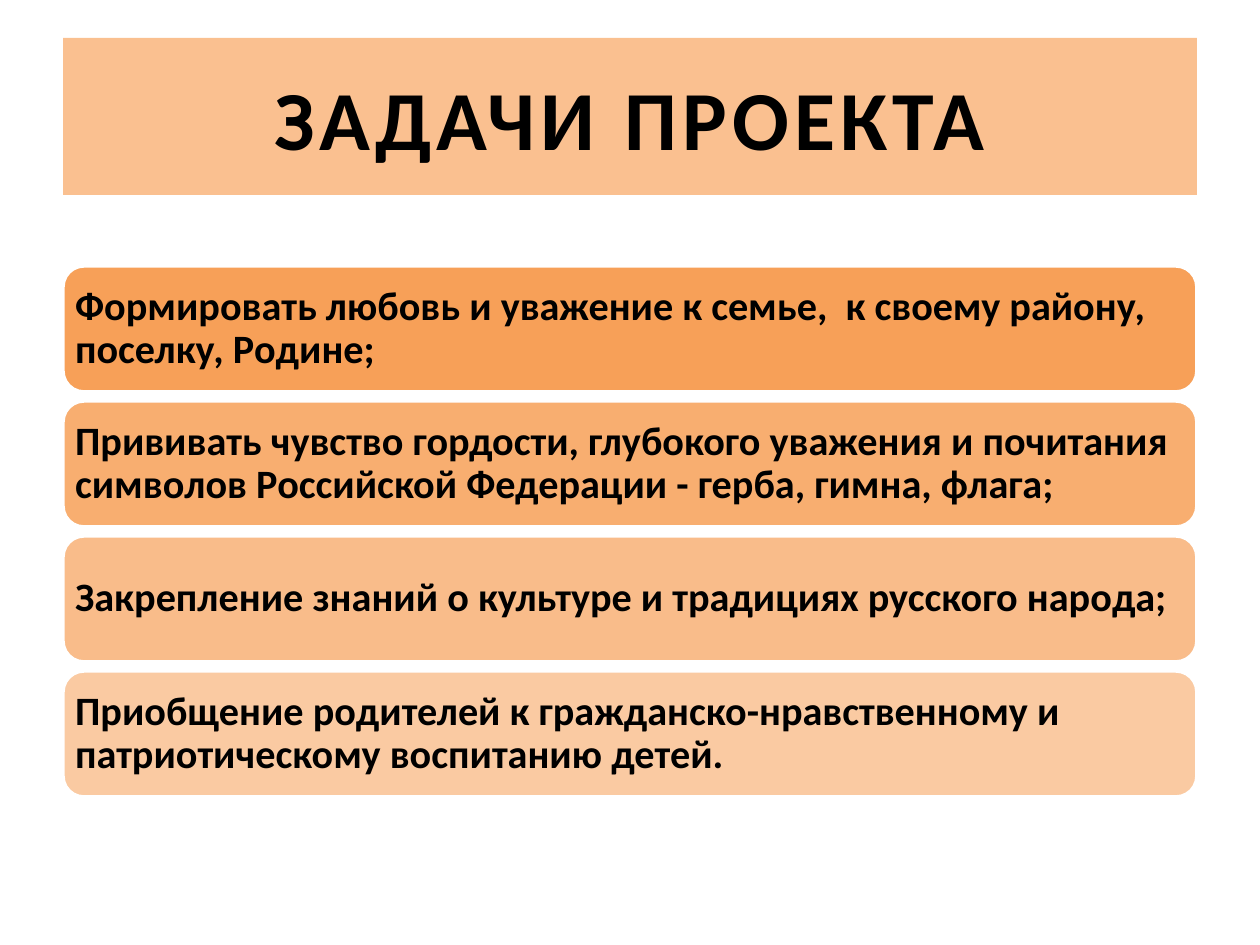
from lxml import etree
from pptx import Presentation
from pptx.dml.color import RGBColor
from pptx.enum.shapes import MSO_SHAPE
from pptx.enum.text import MSO_ANCHOR, PP_ALIGN
from pptx.oxml import parse_xml
from pptx.oxml.ns import nsdecls, qn
from pptx.util import Emu, Pt

TITLE = "ЗАДАЧИ ПРОЕКТА"
# Text of each task and the opacity of its bar in percent
TASKS = [
    ("Формировать любовь и уважение к семье,  к своему району, поселку, Родине;", 90),
    ("Прививать чувство гордости, глубокого уважения и почитания символов "
     "Российской Федерации - герба, гимна, флага;", 77),
    ("Закрепление знаний о культуре и традициях русского народа;", 63),
    ("Приобщение родителей к гражданско-нравственному и патриотическому "
     "воспитанию детей.", 50),
]

COLORS = {"banner": "FAC090", "bar": "F79646", "line": "FFFFFF",
          "text": "000000", "outline": "F4F6F9"}
FONT = "Calibri"
TITLE_FONT = {"size": Pt(48), "bold": True, "name": FONT}
TASK_FONT = {"size": Pt(23), "bold": True, "name": FONT}

PX_PER_INCH = 126
LEFT, WIDTH = 63, 1134
TITLE_TOP, TITLE_HEIGHT = 38, 157
BAR_TOP, BAR_HEIGHT, BAR_PITCH = 266, 126, 135
BAR_INSET = 6

ROUNDED = MSO_SHAPE.ROUNDED_RECTANGLE
MIDDLE = MSO_ANCHOR.MIDDLE

OUTLINE_XML = (f'<a:ln {nsdecls("a")} w="11430"><a:solidFill>'
               f'<a:srgbClr val="{COLORS["outline"]}"/></a:solidFill></a:ln>')
SHADOW_XML = (f'<a:effectLst {nsdecls("a")}>'
              '<a:outerShdw blurRad="25400" dist="25400" dir="2700000" algn="tl">'
              '<a:srgbClr val="000000"><a:alpha val="43000"/></a:srgbClr>'
              '</a:outerShdw></a:effectLst>')


def px(value):
    return Emu(round(value * 914400 / PX_PER_INCH))


def color(name):
    return RGBColor.from_string(COLORS[name])


def set_fill(shape, name):
    shape.fill.solid()
    shape.fill.fore_color.rgb = color(name)


def write(shape, text, font_format, align):
    frame = shape.text_frame
    frame.word_wrap = True
    frame.vertical_anchor = MIDDLE
    paragraph = frame.paragraphs[0]
    paragraph.alignment = align
    run = paragraph.add_run()
    run.text = text
    for name, value in font_format.items():
        setattr(run.font, name, value)
    run.font.color.rgb = color("text")
    return paragraph, run


def add_title(slide):
    title = slide.shapes.title
    title.left, title.top = px(LEFT), px(TITLE_TOP)
    title.width, title.height = px(WIDTH), px(TITLE_HEIGHT)
    set_fill(title, "banner")
    _, run = write(title, TITLE, TITLE_FONT, PP_ALIGN.CENTER)
    properties = run.font._element
    properties.set("spc", "300")
    properties.insert(0, parse_xml(OUTLINE_XML))
    properties.find(qn("a:solidFill")).addnext(parse_xml(SHADOW_XML))


def add_task(slide, index, text, opacity):
    bar = slide.shapes.add_shape(ROUNDED, px(LEFT), px(BAR_TOP + index * BAR_PITCH),
                                 px(WIDTH), px(BAR_HEIGHT))
    bar.shadow.inherit = False
    set_fill(bar, "bar")
    fill_color = bar._element.spPr.find(qn("a:solidFill"))[0]
    etree.SubElement(fill_color, qn("a:alpha"), val=str(opacity * 1000))
    bar.line.color.rgb = color("line")
    bar.line.width = Pt(2)
    for side in ("left", "top", "right", "bottom"):
        setattr(bar.text_frame, f"margin_{side}", px(BAR_INSET))
    paragraph, _ = write(bar, text, TASK_FONT, PP_ALIGN.LEFT)
    paragraph.line_spacing = 0.9


def main():
    presentation = Presentation()
    presentation.slide_width, presentation.slide_height = px(1260), px(945)
    slide = presentation.slides.add_slide(presentation.slide_layouts[5])
    add_title(slide)
    for index, (text, opacity) in enumerate(TASKS):
        add_task(slide, index, text, opacity)
    presentation.save("out.pptx")


if __name__ == "__main__":
    main()
